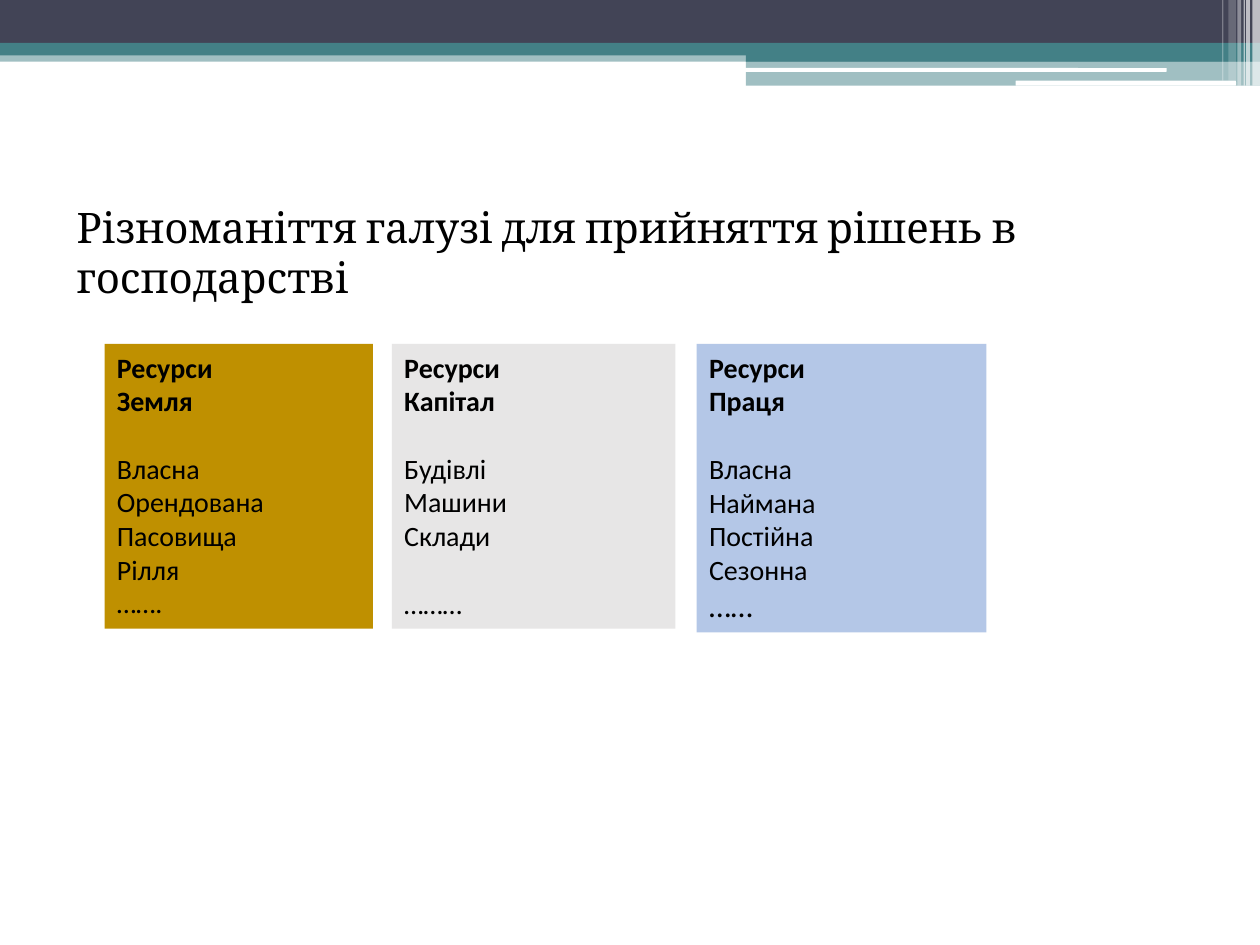
from lxml import etree
from pptx import Presentation
from pptx.dml.color import RGBColor
from pptx.enum.shapes import MSO_SHAPE
from pptx.enum.text import MSO_ANCHOR, PP_ALIGN
from pptx.oxml.ns import qn
from pptx.util import Inches, Pt

RECTANGLE = MSO_SHAPE.RECTANGLE
ROUNDED = MSO_SHAPE.ROUNDED_RECTANGLE
TOP = MSO_ANCHOR.TOP
LEFT = PP_ALIGN.LEFT

COLUMNS, ROWS = 100, 75
COLOURS = {
    "navy": "424456",
    "teal": "438086",
    "white": "FFFFFF",
    "black": "000000",
    "land": "BF9000",
    "capital": "E7E6E6",
    "labour": "B4C7E7",
}
BLANK_LINE = 19.5

BANDS = [
    (0, 4, 100, 0.9, "teal", 50),
    (0, 0, 100, 3.4, "navy", 100),
    (0, 3.4, 100, 1, "teal", 100),
    (59.2, 3.9, 40.8, 1, "teal", 100),
    (59.2, 4.8, 40.8, 2, "teal", 50),
]
RULES = [(59.1, 5.4, 33.5, 0.3), (80.6, 6.4, 17.5, 0.4)]
STRIPES = [
    (99.4, 0.6, 6.8, 65),
    (98.9, 0.3, 6.8, 65),
    (98.7, 0.1, 6.8, 60),
    (98.2, 0.3, 6.8, 40),
    (97.5, 0.6, 6.4, 20),
    (97, 0.1, 6.4, 30),
]
CARDS_TOP = 27.3
CARDS = [
    (8.3, 21.3, 22.6, "land", "Земля",
     ["Власна", "Орендована", "Пасовища", "Рілля"], "…….", 16, 0),
    (31.1, 22.5, 22.6, "capital", "Капітал",
     ["Будівлі", "Машини", "Склади"], "………", 16, BLANK_LINE),
    (55.3, 23, 22.9, "labour", "Праця",
     ["Власна", "Наймана", "Постійна", "Сезонна"], "……", 18, 0),
]


def write(paragraph, text, font="Calibri", size=16, bold=False, colour="black", before=0):
    paragraph.alignment = LEFT
    paragraph.space_before = Pt(before)
    run = paragraph.add_run()
    run.text = text
    run.font.name = font
    run.font.size = Pt(size)
    run.font.bold = bold
    run.font.color.rgb = RGBColor.from_string(COLOURS[colour])


class SlideBuilder:
    def __init__(self, presentation):
        self.slide = presentation.slides.add_slide(presentation.slide_layouts[6])
        self.column = presentation.slide_width / COLUMNS
        self.row = presentation.slide_height / ROWS

    def place(self, left, top, width, height):
        return (round(left * self.column), round(top * self.row),
                round(width * self.column), round(height * self.row))

    def block(self, left, top, width, height, colour, opacity=100, kind=RECTANGLE):
        shape = self.slide.shapes.add_shape(kind, *self.place(left, top, width, height))
        shape.shadow.inherit = False
        shape.line.fill.background()
        shape.fill.solid()
        shape.fill.fore_color.rgb = RGBColor.from_string(COLOURS[colour])
        if opacity < 100:
            colour_element = shape._element.spPr.find(f"{qn('a:solidFill')}/{qn('a:srgbClr')}")
            etree.SubElement(colour_element, qn("a:alpha"), val=str(opacity * 1000))
        return shape

    def title(self, left, top, width, height, text):
        frame = self.slide.shapes.add_textbox(*self.place(left, top, width, height)).text_frame
        frame.word_wrap = True
        write(frame.paragraphs[0], text, font="Cambria", size=24)

    def card(self, left, width, height, colour, resource, items, dots, dots_size, dots_gap):
        frame = self.block(left, CARDS_TOP, width, height, colour).text_frame
        frame.word_wrap = True
        frame.vertical_anchor = TOP
        write(frame.paragraphs[0], "Ресурси", bold=True)
        write(frame.add_paragraph(), resource, bold=True)
        for index, item in enumerate(items):
            write(frame.add_paragraph(), item, before=0 if index else BLANK_LINE)
        write(frame.add_paragraph(), dots, size=dots_size, before=dots_gap)


def main():
    presentation = Presentation()
    presentation.slide_width = Inches(10)
    presentation.slide_height = Inches(7.5)
    builder = SlideBuilder(presentation)
    for band in BANDS:
        builder.block(*band)
    for rule in RULES:
        builder.block(*rule, "white", kind=ROUNDED)
    for left, width, height, opacity in STRIPES:
        builder.block(left, 0, width, height, "white", opacity)
    for card in CARDS:
        builder.card(*card)
    builder.title(5.1, 15.5, 92.4, 5, "Різноманіття галузі для прийняття рішень в господарстві")
    presentation.save("out.pptx")


if __name__ == "__main__":
    main()
